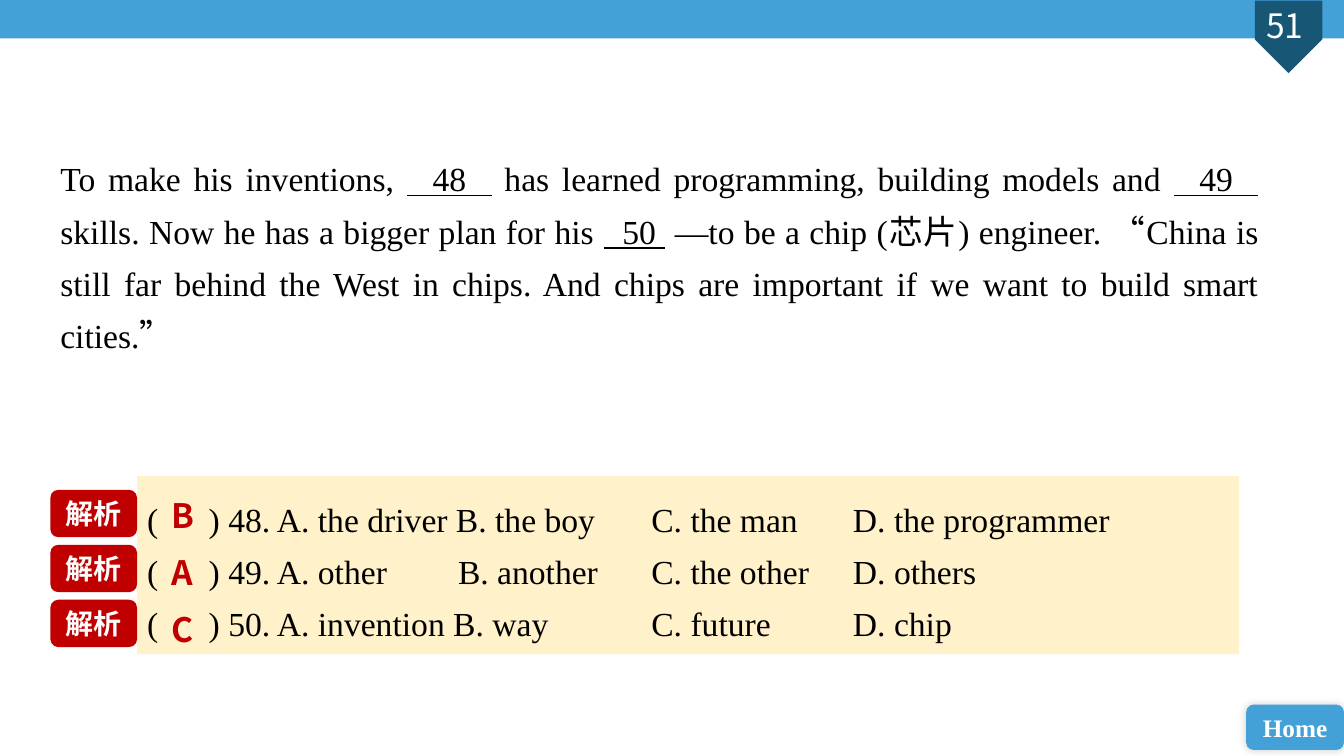
from lxml.etree import SubElement
from pptx import Presentation
from pptx.dml.color import RGBColor
from pptx.enum.shapes import MSO_SHAPE
from pptx.enum.text import MSO_ANCHOR, MSO_AUTO_SIZE, PP_ALIGN
from pptx.oxml.ns import qn
from pptx.util import Inches, Pt

PASSAGE = [
    ("To make his inventions, ", False),
    ("  48  ", True),
    (" has learned programming, building models and ", False),
    ("  49  ", True),
    (" skills. Now he has a bigger plan for his ", False),
    ("  50 ", True),
    (" —to be a chip (芯片) engineer. “China is still far behind the West in chips. "
     "And chips are important if we want to build smart cities.”", False),
]
QUESTIONS = [
    ("B", "(      ) 48. A. the driver B. the boy \tC. the man \tD. the programmer"),
    ("A", "(      ) 49. A. other\t B. another \tC. the other \tD. others"),
    ("C", "(      ) 50. A. invention B. way \tC. future \tD. chip"),
]
PAGE_NUMBER = "51"
HOME_LABEL = "Home"
EXPLAIN_LABEL = "解析"

SERIF, SANS, LABEL = "Times New Roman", "Noto Sans CJK SC", "Calibri"
BLUE = RGBColor(0x43, 0xA1, 0xD8)
NAVY = RGBColor(0x18, 0x56, 0x75)
CREAM = RGBColor(0xFF, 0xF2, 0xCA)
RED = RGBColor(0xC0, 0x00, 0x00)
WHITE = RGBColor(0xFF, 0xFF, 0xFF)
BLACK = RGBColor(0x00, 0x00, 0x00)

WIDTH, HEIGHT = 13.33, 7.5
MARGIN = 0.5
OPTIONS_AREA = (1.36, 4.72, 10.93, 1.77)
ROW_TOP = 4.86
LABEL_STEP, ANSWER_STEP = 0.545, 0.565

deck = Presentation()
deck.slide_width, deck.slide_height = Inches(WIDTH), Inches(HEIGHT)
page = deck.slides.add_slide(deck.slide_layouts[1])
title, options = page.placeholders
title.element.getparent().remove(title.element)


def add_panel(kind, area, color):
    panel = page.shapes.add_shape(kind, *map(Inches, area))
    panel.shadow.inherit = False
    panel.fill.solid()
    panel.fill.fore_color.rgb = color
    panel.line.fill.background()
    return panel


def add_box(area):
    return page.shapes.add_textbox(*map(Inches, area))


def write(box, paragraphs, font=SERIF, size=24, color=BLACK, bold=False,
          align=PP_ALIGN.LEFT, spacing=1.0, anchor=MSO_ANCHOR.TOP, wrap=True):
    frame = box.text_frame
    frame.word_wrap = wrap
    frame.auto_size = MSO_AUTO_SIZE.NONE
    frame.vertical_anchor = anchor
    for index, spans in enumerate(paragraphs):
        para = frame.add_paragraph() if index else frame.paragraphs[0]
        para.alignment, para.line_spacing = align, spacing
        para.space_before = para.space_after = Pt(0)
        for words, underlined in spans:
            span = para.add_run()
            span.text = words
            span.font.name, span.font.size = font, Pt(size)
            span.font.bold, span.font.underline = bold, underlined
            span.font.color.rgb = color
            properties = span.font._element
            properties.set("lang", "zh-CN")
            SubElement(properties, qn("a:ea")).set("typeface", SANS)


def plain(words):
    return [[(words, False)]]


add_panel(MSO_SHAPE.RECTANGLE, (0, 0, WIDTH, 0.38), BLUE)
add_panel(MSO_SHAPE.PENTAGON, (12.42, 0.03, 0.72, 0.67), NAVY).rotation = 90
write(add_box((12.29, 0, 0.98, 0.5)), plain(PAGE_NUMBER + " "),
      font=SANS, color=WHITE, align=PP_ALIGN.CENTER)

home = add_panel(MSO_SHAPE.ROUNDED_RECTANGLE, (12.36, 6.99, 0.97, 0.45), BLUE)
write(home, plain(HOME_LABEL), size=18, color=WHITE, bold=True,
      align=PP_ALIGN.CENTER, anchor=MSO_ANCHOR.MIDDLE)
effects = home.element.spPr.find(qn("a:effectLst"))
shadow = SubElement(effects, qn("a:outerShdw"), blurRad=str(Pt(6)), dist="0", dir="18900000")
shade = SubElement(shadow, qn("a:srgbClr"), val=str(BLACK))
SubElement(shade, qn("a:alpha"), val="20000")

write(add_box((MARGIN, 1.4, 12.08, 1.67)), [PASSAGE],
      align=PP_ALIGN.JUSTIFY, spacing=1.3)

options.left, options.top, options.width, options.height = map(Inches, OPTIONS_AREA)
options.fill.solid()
options.fill.fore_color.rgb = CREAM
write(options, [[(line, False)] for _, line in QUESTIONS],
      spacing=1.3, anchor=MSO_ANCHOR.MIDDLE)
for para in options.text_frame.paragraphs:
    settings = para._p.get_or_add_pPr()
    for name, length in (("marL", 0), ("indent", 0), ("defTabSz", Inches(1))):
        settings.set(name, str(int(length)))
    SubElement(settings, qn("a:buNone"))

for row, (answer, _) in enumerate(QUESTIONS):
    write(add_box((1.6, ROW_TOP + row * ANSWER_STEP, 0.43, 0.5)), plain(answer),
          font=SANS, color=RED, bold=True, wrap=False)
    label = add_panel(MSO_SHAPE.ROUNDED_RECTANGLE,
                      (MARGIN, ROW_TOP + row * LABEL_STEP, 0.86, 0.47), RED)
    write(label, plain(EXPLAIN_LABEL), font=LABEL, size=20, color=WHITE, bold=True,
          align=PP_ALIGN.CENTER, anchor=MSO_ANCHOR.MIDDLE)

deck.save("out.pptx")
